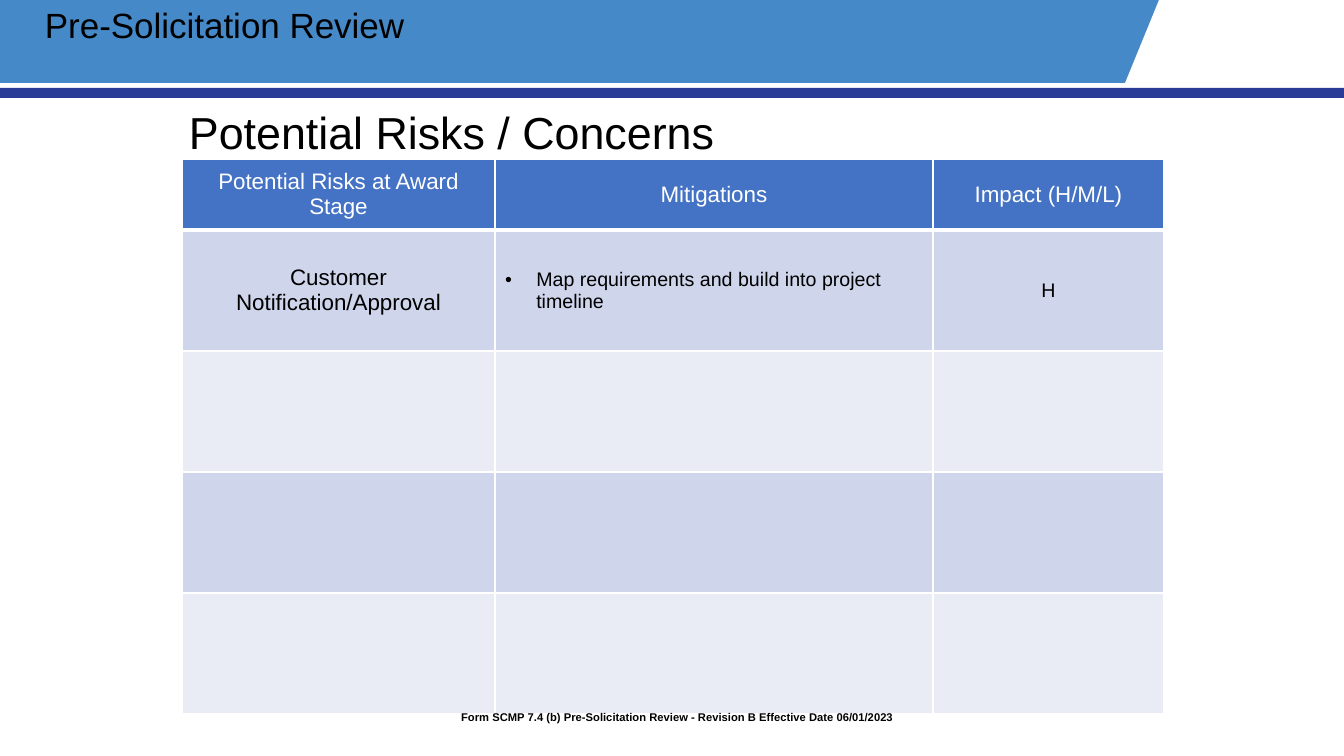
from lxml import etree
from pptx import Presentation
from pptx import util as u
from pptx.dml.color import RGBColor
from pptx.enum import shapes, text
from pptx.oxml.ns import qn

PX = 914400 / 100.8
COLORS = {"banner": "4589C8", "stripe": "2A3B97", "white": "FFFFFF", "black": "000000",
          "header": "4472C4", "band_dark": "CFD5EA", "band_light": "E9EBF5"}


def px(*lengths):
    return [u.Emu(round(n * PX)) for n in lengths]


def add_run(p, words, size, color="black", bold=False):
    r = p.add_run()
    r.text = words
    r.font.name = "Arial"
    r.font.size = u.Pt(size)
    r.font.bold = bold
    r.font.color.rgb = RGBColor.from_string(COLORS[color])


prs = Presentation()
prs.slide_width, prs.slide_height = px(1344, 756)
s = prs.slides.add_slide(prs.slide_layouts[6])

# Banner with slanted end, and stripe below
banner = s.shapes.add_shape(shapes.MSO_SHAPE.RECTANGLE, *px(0, 0, 1330, 83))
builder = s.shapes.build_freeform(1159, 0, scale=PX)
builder.add_line_segments([(1344, 0), (1344, 88), (1123, 88)], close=True)
slant = builder.convert_to_shape()
stripe = s.shapes.add_shape(shapes.MSO_SHAPE.RECTANGLE, *px(0, 88, 1344, 10))
for sp, color in ((banner, "banner"), (slant, "white"), (stripe, "stripe")):
    sp.shadow.inherit = False
    sp.fill.solid()
    sp.fill.fore_color.rgb = RGBColor.from_string(COLORS[color])
    sp.line.fill.background()

# Risk table
rows = [
    ["Potential Risks at Award Stage", "Mitigations", "Impact (H/M/L)"],
    ["Customer Notification/Approval", "Map requirements and build into project timeline", "H"],
    [""] * 3,
    [""] * 3,
    [""] * 3,
]
table = s.shapes.add_table(5, 3, *px(182, 159, 982, 555)).table
for column, width in zip(table.columns, px(313, 438, 231)):
    column.width = width
for row, height in zip(table.rows, px(71, 121, 121, 121, 121)):
    row.height = height

for i, row in enumerate(rows):
    fill = "header" if i == 0 else "band_dark" if i % 2 else "band_light"
    for j, words in enumerate(row):
        cell = table.cell(i, j)
        cell.vertical_anchor = text.MSO_ANCHOR.MIDDLE
        if i == 0:
            tcPr = cell._tc.get_or_add_tcPr()
            for side, points in (("L", 1), ("R", 1), ("T", 1), ("B", 3)):
                ln = etree.SubElement(tcPr, qn("a:ln" + side), w=str(u.Pt(points)))
                solid = etree.SubElement(ln, qn("a:solidFill"))
                etree.SubElement(solid, qn("a:srgbClr"), val=COLORS["white"])
        cell.fill.solid()
        cell.fill.fore_color.rgb = RGBColor.from_string(COLORS[fill])
        if not words:
            continue
        p = cell.text_frame.paragraphs[0]
        if i == 1 and j == 1:
            pPr = p._p.get_or_add_pPr()
            pPr.set("marL", str(u.Inches(0.31)))
            pPr.set("indent", str(u.Inches(-0.31)))
            etree.SubElement(pPr, qn("a:buFont"), typeface="Arial")
            etree.SubElement(pPr, qn("a:buChar"), char="•")
        else:
            p.alignment = text.PP_ALIGN.CENTER
        add_run(p, words, 14 if i == 1 and j > 0 else 16, "white" if i == 0 else "black")

# Title, heading and form footer
labels = [
    ("Pre-Solicitation Review", (35, 3, 717, 96), 25, 0.9, False, 0),
    ("Potential Risks / Concerns", (179, 107, 605, 57), 32, 0.88, False, 0),
    ("Form SCMP 7.4 (b) Pre-Solicitation Review - Revision B Effective Date 06/01/2023",
     (426, 707, 492, 38), 8, 0.9, True, 0.25),
]
for words, box, size, spacing, bold, indent in labels:
    tf = s.shapes.add_textbox(*px(*box)).text_frame
    tf.word_wrap = True
    p = tf.paragraphs[0]
    p.line_spacing = spacing
    if indent:
        pPr = p._p.get_or_add_pPr()
        pPr.set("marL", str(u.Inches(2 * indent)))
        pPr.set("indent", str(u.Inches(-indent)))
    add_run(p, words, size, bold=bold)

prs.save("out.pptx")
